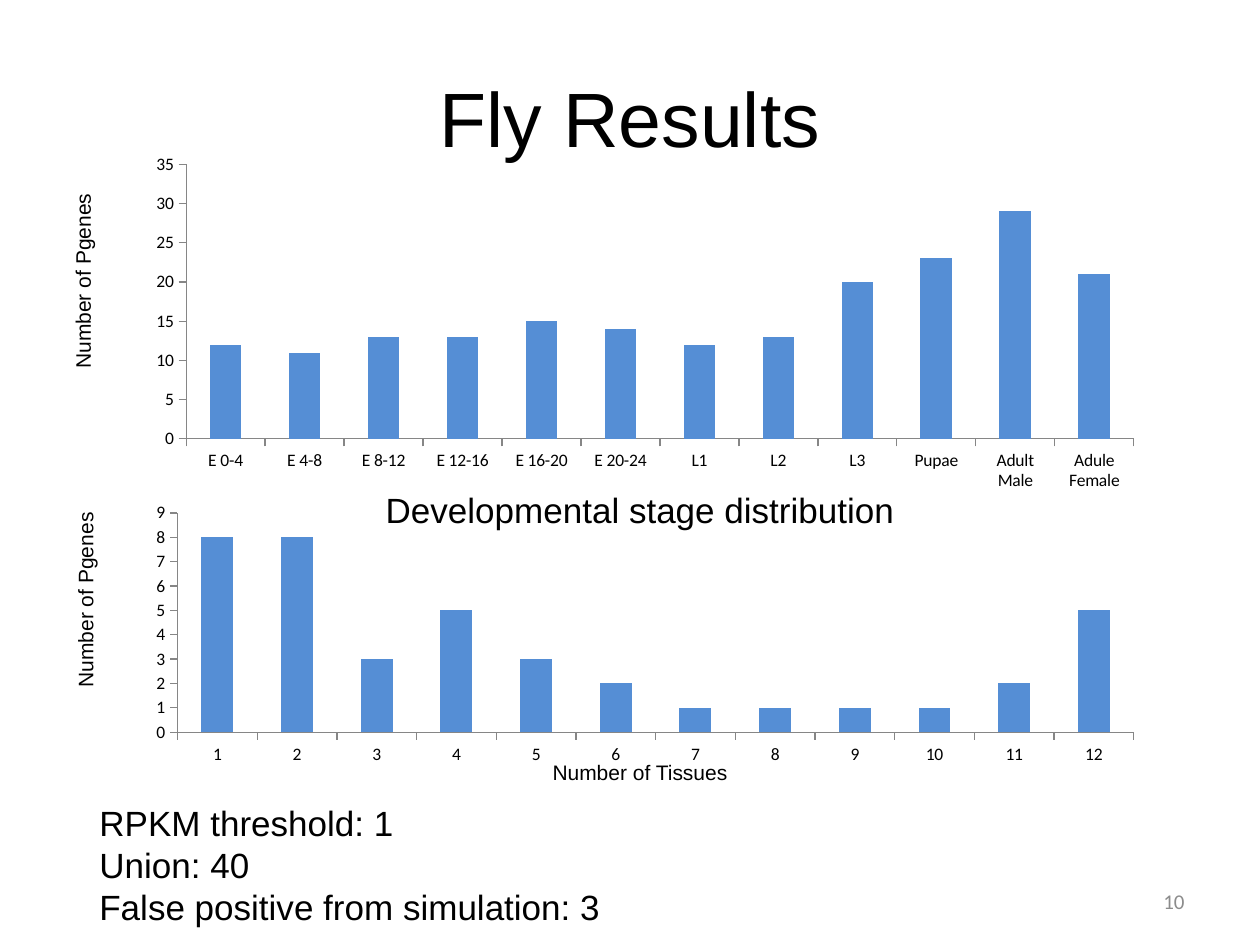
from dataclasses import dataclass

from lxml.etree import SubElement
from pptx import Presentation
from pptx.chart.data import CategoryChartData
from pptx.dml.color import RGBColor
from pptx.enum.chart import XL_CHART_TYPE, XL_TICK_MARK
from pptx.enum.text import MSO_ANCHOR, PP_ALIGN
from pptx.oxml.ns import qn
from pptx.util import Inches, Pt


@dataclass(frozen=True)
class Theme:
    text: RGBColor = RGBColor(0x00, 0x00, 0x00)
    muted: RGBColor = RGBColor(0x8C, 0x8C, 0x8C)
    bar: RGBColor = RGBColor(0x55, 0x8E, 0xD5)
    axis: RGBColor = RGBColor(0x86, 0x86, 0x86)
    body_font: str = "Arial"
    chart_font: str = "Calibri"
    title_size: int = 44
    body_size: int = 20
    label_size: int = 12
    chart_size: int = 10


@dataclass(frozen=True)
class Box:
    left: float
    top: float
    width: float
    height: float

    def emu(self):
        return [Inches(v) for v in (self.left, self.top, self.width, self.height)]


@dataclass(frozen=True)
class BarChart:
    box: Box
    categories: tuple[str, ...]
    values: tuple[int, ...]
    maximum: int
    step: int


THEME = Theme()
CHARTS = (
    BarChart(Box(1.08, 3.95, 8.08, 2.16), tuple(str(n) for n in range(1, 13)),
             (8, 8, 3, 5, 3, 2, 1, 1, 1, 1, 2, 5), 9, 1),
    BarChart(Box(1.08, 1.17, 8.08, 2.78),
             ("E 0-4", "E 4-8", "E 8-12", "E 12-16", "E 16-20", "E 20-24",
              "L1", "L2", "L3", "Pupae", "Adult Male", "Adule Female"),
             (12, 11, 13, 13, 15, 14, 12, 13, 20, 23, 29, 21), 35, 5),
)


def add_text(s, box: Box, text: str, *, size: int = THEME.label_size,
             font: str = THEME.body_font, color: RGBColor = THEME.text,
             align=PP_ALIGN.LEFT, anchor=MSO_ANCHOR.MIDDLE,
             rotation: int = 0, wrap: bool = True) -> None:
    """Add a text box with one paragraph for each line of text."""
    sp = s.shapes.add_textbox(*box.emu())
    sp.rotation = rotation
    tf = sp.text_frame
    tf.word_wrap = wrap
    tf.vertical_anchor = anchor
    for i, line in enumerate(text.split("\n")):
        p = tf.paragraphs[0] if i == 0 else tf.add_paragraph()
        p.alignment = align
        r = p.add_run()
        r.text = line
        r.font.size = Pt(size)
        r.font.name = font
        r.font.color.rgb = color


def clear_background(chart) -> None:
    """Make the chart area transparent so that nearby text shows through."""
    space = chart.element
    sp_pr = SubElement(space, qn("c:spPr"))
    SubElement(sp_pr, qn("a:noFill"))
    SubElement(SubElement(sp_pr, qn("a:ln")), qn("a:noFill"))
    space.find(qn("c:chart")).addnext(sp_pr)


def add_bar_chart(s, data: BarChart) -> None:
    chart_data = CategoryChartData()
    chart_data.categories = data.categories
    chart_data.add_series("Series 1", data.values)
    chart = s.shapes.add_chart(XL_CHART_TYPE.COLUMN_CLUSTERED,
                               *data.box.emu(), chart_data).chart
    chart.has_title = False
    chart.has_legend = False
    chart.font.size = Pt(THEME.chart_size)
    chart.font.name = THEME.chart_font
    chart.font.color.rgb = THEME.text
    clear_background(chart)

    plot = chart.plots[0]
    plot.vary_by_categories = False
    plot.gap_width = 150
    fill = plot.series[0].format.fill
    fill.solid()
    fill.fore_color.rgb = THEME.bar

    for axis in (chart.category_axis, chart.value_axis):
        axis.has_major_gridlines = False
        axis.major_tick_mark = XL_TICK_MARK.OUTSIDE
        axis.minor_tick_mark = XL_TICK_MARK.NONE
        axis.format.line.color.rgb = THEME.axis
        axis.format.line.width = Pt(0.75)
    chart.value_axis.minimum_scale = 0
    chart.value_axis.maximum_scale = data.maximum
    chart.value_axis.major_unit = data.step


def main() -> None:
    prs = Presentation()
    prs.slide_width, prs.slide_height = Inches(10), Inches(7.5)
    s = prs.slides.add_slide(prs.slide_layouts[6])

    add_text(s, Box(0.69, 6.31, 8.81, 1.11),
             "RPKM threshold: 1\nUnion: 40\nFalse positive from simulation: 3",
             size=THEME.body_size, anchor=MSO_ANCHOR.TOP)
    add_text(s, Box(0.5, 0.3, 9, 1.25), "Fly Results",
             size=THEME.title_size, align=PP_ALIGN.CENTER)
    add_text(s, Box(0.58, 3.42, 9, 1.25), "Developmental stage distribution",
             size=THEME.body_size, align=PP_ALIGN.CENTER)
    add_text(s, Box(0.58, 5.5, 9, 1.25), "Number of Tissues", align=PP_ALIGN.CENTER)
    for left, top in ((-0.13, 4.6), (-0.15, 2.07)):
        add_text(s, Box(left, top, 1.61, 0.3), "Number of Pgenes",
                 anchor=MSO_ANCHOR.TOP, rotation=270, wrap=False)
    add_text(s, Box(7.17, 6.95, 2.33, 0.4), "10", font=THEME.chart_font,
             color=THEME.muted, align=PP_ALIGN.RIGHT)
    for data in CHARTS:
        add_bar_chart(s, data)

    prs.save("out.pptx")


if __name__ == "__main__":
    main()
